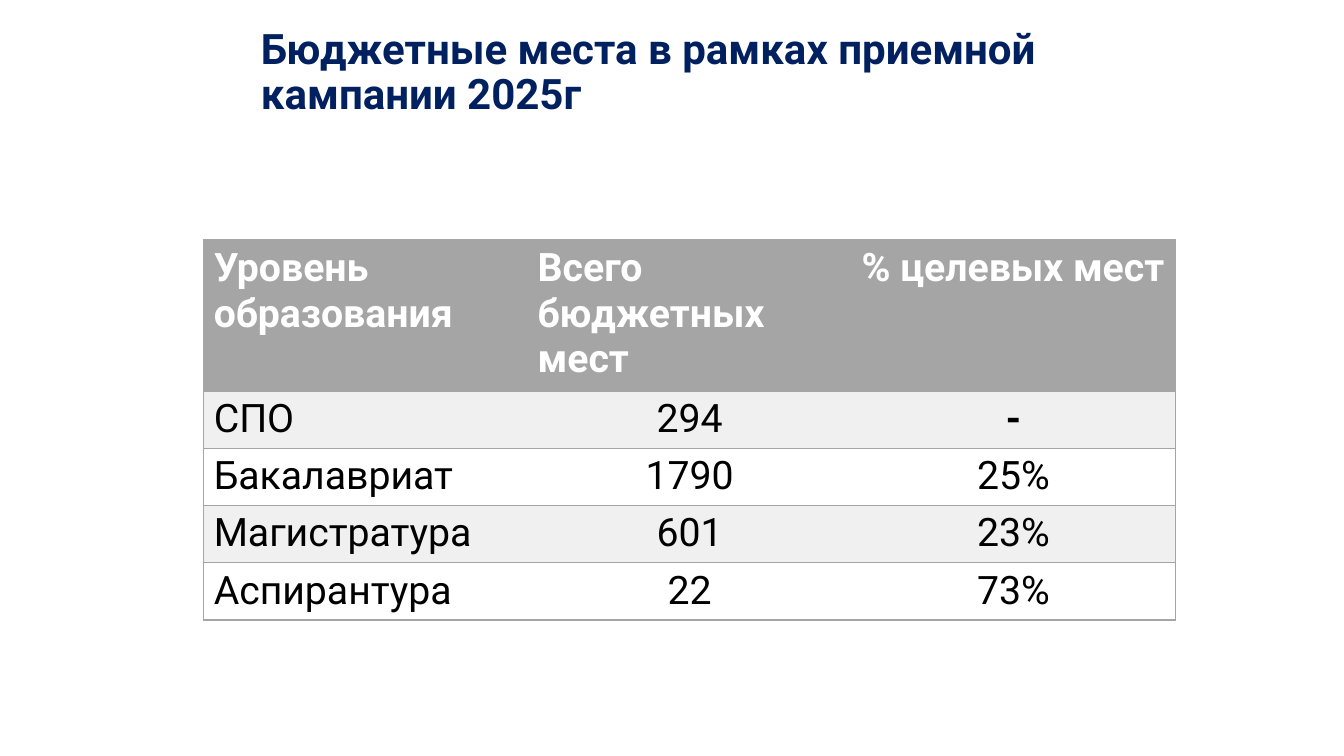
from dataclasses import dataclass

from lxml.etree import SubElement
from pptx import Presentation
from pptx.dml.color import RGBColor as Rgb
from pptx.enum.text import MSO_ANCHOR as Anchor, PP_ALIGN as Align
from pptx.oxml.ns import qn
from pptx.util import Inches, Pt


@dataclass(frozen=True)
class Theme:
    """Colours, font and type sizes of the slide."""
    font: str = "Roboto"
    title: str = "002060"
    header: str = "A5A5A5"
    band: str = "F0F0F0"
    light: str = "FFFFFF"
    dark: str = "000000"
    title_size: int = 30
    table_size: int = 28
    border: int = 1


THEME = Theme()
WIDTH, HEIGHT = 13.33, 7.5
TITLE = "Бюджетные места в рамках приемной\vкампании 2025г"
TITLE_BOX = (2.49, 0, 11.28, 1.45)
TABLE_BOX = (2.02, 2.38, 9.64, 3.71)
ROW_SHARES = (1.47, 0.56, 0.56, 0.56, 0.56)
ROWS = (
    ("Уровень образования", "Всего бюджетных мест", "% целевых мест"),
    ("СПО", "294", "-"),
    ("Бакалавриат", "1790", "25%"),
    ("Магистратура", "601", "23%"),
    ("Аспирантура", "22", "73%"),
)


def style_font(font, color, size, bold):
    """Apply the theme font with the given format."""
    values = {"name": THEME.font, "size": Pt(size), "bold": bold}
    for name, value in values.items():
        setattr(font, name, value)
    font.color.rgb = Rgb.from_string(color)


def add_title(page, box):
    """Place the two-line slide title in its box."""
    frame = page.shapes.add_textbox(*map(Inches, box)).text_frame
    for name, value in {"word_wrap": True, "vertical_anchor": Anchor.MIDDLE}.items():
        setattr(frame, name, value)
    para = frame.paragraphs[0]
    para.text = TITLE
    para.line_spacing = 0.9
    for span in para.runs:
        style_font(span.font, THEME.title, THEME.title_size, True)


def set_borders(cell, visible):
    """Draw the visible cell edges and clear the others."""
    properties = cell._tc.get_or_add_tcPr()
    for edge in "LRTB":
        line = SubElement(properties, qn(f"a:ln{edge}"), w=str(Pt(THEME.border)))
        if edge in visible:
            fill = SubElement(line, qn("a:solidFill"))
            SubElement(fill, qn("a:srgbClr"), val=THEME.header)
        else:
            SubElement(line, qn("a:noFill"))


def fill_cell(cell, text, row, column):
    """Write and format one cell by its place in the table."""
    is_header = row == 0
    outer = {0: "L", len(ROWS[0]) - 1: "R"}
    set_borders(cell, "TB" + outer.get(column, ""))
    fill = THEME.header if is_header else THEME.band if row % 2 else THEME.light
    cell.fill.solid()
    cell.fill.fore_color.rgb = Rgb.from_string(fill)
    cell.text = text
    para = cell.text_frame.paragraphs[0]
    para.alignment = Align.LEFT if is_header or column == 0 else Align.CENTER
    color = THEME.light if is_header else THEME.dark
    style_font(para.runs[0].font, color, THEME.table_size, is_header or text == "-")


def add_places_table(page, box):
    """Place the table of budget places in its box."""
    left, top, width, height = box
    columns = len(ROWS[0])
    table = page.shapes.add_table(len(ROWS), columns, *map(Inches, box)).table
    for column in table.columns:
        column.width = Inches(width / columns)
    for row, share in zip(table.rows, ROW_SHARES):
        row.height = Inches(height * share / sum(ROW_SHARES))
    for row, texts in enumerate(ROWS):
        for column, text in enumerate(texts):
            fill_cell(table.cell(row, column), text, row, column)


def main():
    """Build the slide and save the deck."""
    deck = Presentation()
    deck.slide_width, deck.slide_height = Inches(WIDTH), Inches(HEIGHT)
    page = deck.slides.add_slide(deck.slide_layouts[6])
    add_title(page, TITLE_BOX)
    add_places_table(page, TABLE_BOX)
    deck.save("out.pptx")


if __name__ == "__main__":
    main()
